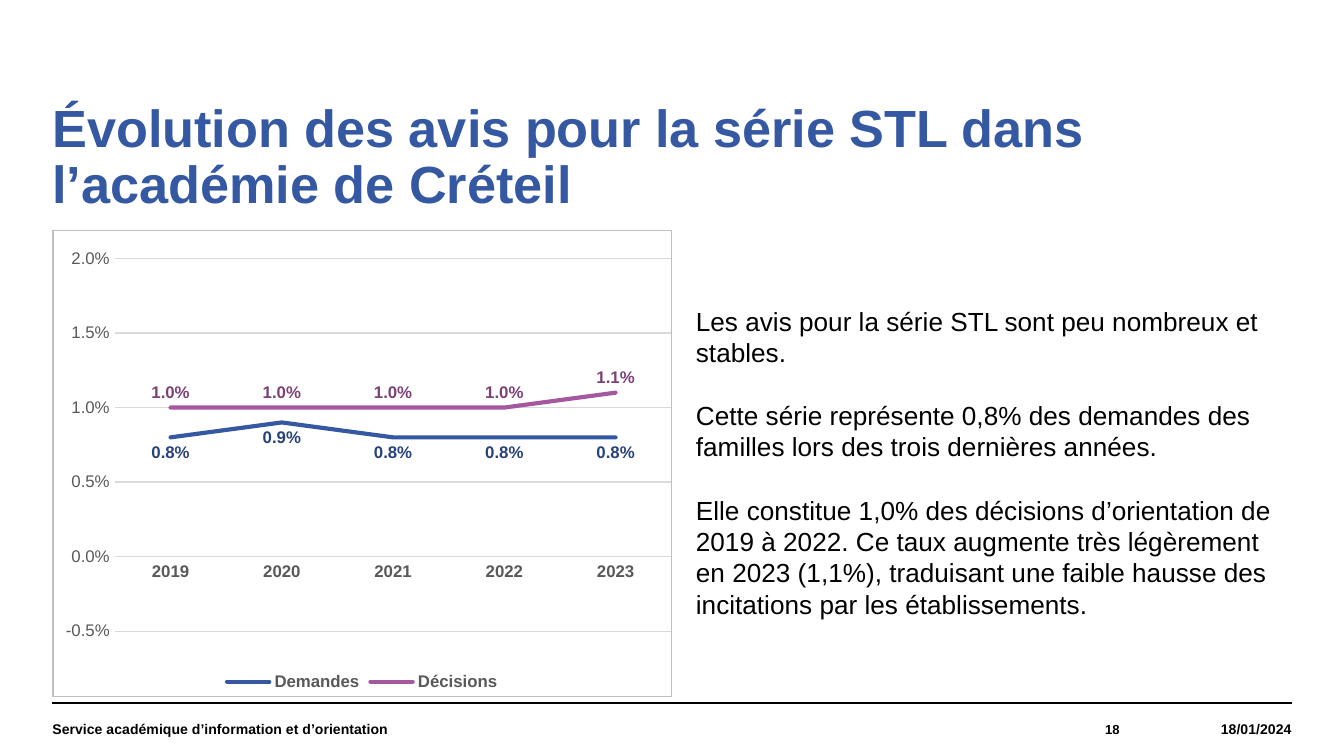
from lxml import etree
from pptx import Presentation
from pptx.chart.data import CategoryChartData
from pptx.dml.color import RGBColor
from pptx.enum.chart import XL_CHART_TYPE, XL_LABEL_POSITION, XL_LEGEND_POSITION, XL_TICK_MARK
from pptx.enum.shapes import MSO_CONNECTOR
from pptx.enum.text import MSO_ANCHOR, MSO_AUTO_SIZE, PP_ALIGN
from pptx.oxml import parse_xml
from pptx.oxml.ns import nsdecls, qn
from pptx.util import Inches, Pt

BLACK = RGBColor(0x00, 0x00, 0x00)
BLUE = RGBColor(0x35, 0x58, 0xA2)
DARK_BLUE = RGBColor(0x28, 0x42, 0x7A)
PURPLE = RGBColor(0xA5, 0x58, 0xA0)
DARK_PURPLE = RGBColor(0x7C, 0x42, 0x78)
GREY = RGBColor(0x59, 0x59, 0x59)
GRID_GREY = RGBColor(0xD9, 0xD9, 0xD9)
BORDER_GREY = RGBColor(0xBF, 0xBF, 0xBF)
FONT = "Arial"
LEFT = 0.39
WIDTH = 9.22

YEARS = ["2019", "2020", "2021", "2022", "2023"]
SERIES = [
    ("Demandes", [0.008, 0.009, 0.008, 0.008, 0.008], BLUE, DARK_BLUE, XL_LABEL_POSITION.BELOW),
    ("Décisions", [0.01, 0.01, 0.01, 0.01, 0.011], PURPLE, DARK_PURPLE, XL_LABEL_POSITION.ABOVE),
]
COMMENTS = [
    "Les avis pour la série STL sont peu nombreux et stables.",
    "Cette série représente 0,8% des demandes des familles lors des trois dernières années.",
    "Elle constitue 1,0% des décisions d’orientation de 2019 à 2022. Ce taux augmente très "
    "légèrement en 2023 (1,1%), traduisant une faible hausse des incitations par les établissements.",
]


def set_font(font, size, color, bold=False):
    font.name = FONT
    font.size = Pt(size)
    font.bold = bold
    font.color.rgb = color


def write(frame, paragraphs, size, color=BLACK, bold=False, align=PP_ALIGN.LEFT,
          anchor=MSO_ANCHOR.TOP, inset=0, gap=0, spacing=None):
    frame.word_wrap = True
    frame.auto_size = MSO_AUTO_SIZE.NONE
    frame.vertical_anchor = anchor
    if inset is not None:
        frame.margin_left = frame.margin_right = Inches(inset)
        frame.margin_top = frame.margin_bottom = Inches(inset)
    for index, text in enumerate(paragraphs):
        para = frame.add_paragraph() if index else frame.paragraphs[0]
        para.alignment = align
        para.line_spacing = spacing
        para.space_before = Pt(gap if index else 0)
        span = para.add_run()
        span.text = text
        set_font(span.font, size, color, bold)


def add_title(page, left, top, width, height):
    title = page.shapes.title
    title.left, title.top = Inches(left), Inches(top)
    title.width, title.height = Inches(width), Inches(height)
    write(title.text_frame, ["Évolution des avis pour la série STL dans l’académie de Créteil"],
          28, color=BLUE, bold=True, spacing=0.9)


def add_text(page, left, top, width, height, paragraphs, size, **style):
    box = page.shapes.add_textbox(Inches(left), Inches(top), Inches(width), Inches(height))
    write(box.text_frame, paragraphs, size, **style)


def add_footer(page, left, top, width, height):
    rule = page.shapes.add_connector(MSO_CONNECTOR.STRAIGHT, Inches(left), Inches(top),
                                     Inches(left + width), Inches(top))
    rule.line.color.rgb = BLACK
    rule.line.width = Pt(0.8)
    etree.SubElement(rule._element.spPr, qn("a:effectLst"))
    parts = [
        ("Service académique d’information et d’orientation", 6.46, 7.5, PP_ALIGN.LEFT),
        ("18", 1.48, 7, PP_ALIGN.RIGHT),
        ("18/01/2024", 1.28, 7.5, PP_ALIGN.RIGHT),
    ]
    for text, part_width, size, align in parts:
        add_text(page, left, top, part_width, height, [text], size, bold=True,
                 align=align, anchor=MSO_ANCHOR.MIDDLE)
        left += part_width


def set_plot_layout(chart, x, y, w, h):
    plot_area = chart._chartSpace.chart.plotArea
    for layout in plot_area.findall(qn("c:layout")):
        plot_area.remove(layout)
    plot_area.insert(0, parse_xml(
        f'<c:layout {nsdecls("c")}><c:manualLayout><c:layoutTarget val="inner"/>'
        f'<c:xMode val="edge"/><c:yMode val="edge"/><c:x val="{x}"/><c:y val="{y}"/>'
        f'<c:w val="{w}"/><c:h val="{h}"/></c:manualLayout></c:layout>'))


def set_chart_border(chart, color, width):
    chart._chartSpace.chart.addnext(parse_xml(
        f'<c:spPr {nsdecls("c", "a")}><a:noFill/><a:ln w="{Pt(width)}"><a:solidFill>'
        f'<a:srgbClr val="{color}"/></a:solidFill></a:ln></c:spPr>'))


def format_axes(chart):
    for axis, bold in ((chart.category_axis, True), (chart.value_axis, False)):
        axis.major_tick_mark = axis.minor_tick_mark = XL_TICK_MARK.NONE
        set_font(axis.tick_labels.font, 9, GREY, bold)
    years, rates = chart.category_axis, chart.value_axis
    rates.minimum_scale, rates.maximum_scale, rates.major_unit = -0.005, 0.02, 0.005
    rates.tick_labels.number_format = "0.0%"
    rates.tick_labels.number_format_is_linked = False
    rates.format.line.fill.background()
    for line in (years.format.line, rates.major_gridlines.format.line):
        line.color.rgb = GRID_GREY
        line.width = Pt(0.75)


def add_rate_chart(page, left, top, width, height):
    data = CategoryChartData(number_format="0.0%")
    data.categories = YEARS
    for name, values, *_ in SERIES:
        data.add_series(name, values)
    chart = page.shapes.add_chart(XL_CHART_TYPE.LINE, Inches(left), Inches(top),
                                  Inches(width), Inches(height), data).chart
    set_font(chart.font, 10, BLACK)
    chart.has_title = False
    chart.has_legend = True
    chart.legend.position = XL_LEGEND_POSITION.BOTTOM
    chart.legend.include_in_layout = False
    set_font(chart.legend.font, 9, GREY, True)
    format_axes(chart)
    plot = chart.plots[0]
    plot.vary_by_categories = False
    for series, (_, _, color, label_color, position) in zip(plot.series, SERIES):
        series.smooth = False
        line = series.format.line
        line.color.rgb = color
        line.width = Pt(2.25)
        line._get_or_add_ln().set("cap", "rnd")
        labels = series.data_labels
        labels.show_value = True
        labels.position = position
        labels.number_format = "0.0%"
        labels.number_format_is_linked = False
        set_font(labels.font, 9, label_color, True)
    set_plot_layout(chart, 0.1, 0.06, 0.9, 0.8)
    set_chart_border(chart, BORDER_GREY, 0.75)


def main():
    deck = Presentation()
    deck.slide_width = Inches(10)
    deck.slide_height = Inches(10 * 9 / 16)
    page = deck.slides.add_slide(deck.slide_layouts[5])
    add_title(page, LEFT, 0.76, WIDTH, 0.38)
    add_footer(page, LEFT, 5.23, WIDTH, 0.39)
    add_rate_chart(page, LEFT, 1.71, 4.61, 3.48)
    add_text(page, 5.08, 2.22, 4.53, 2.46, COMMENTS, 14, inset=None, gap=17)
    deck.save("out.pptx")


if __name__ == "__main__":
    main()
